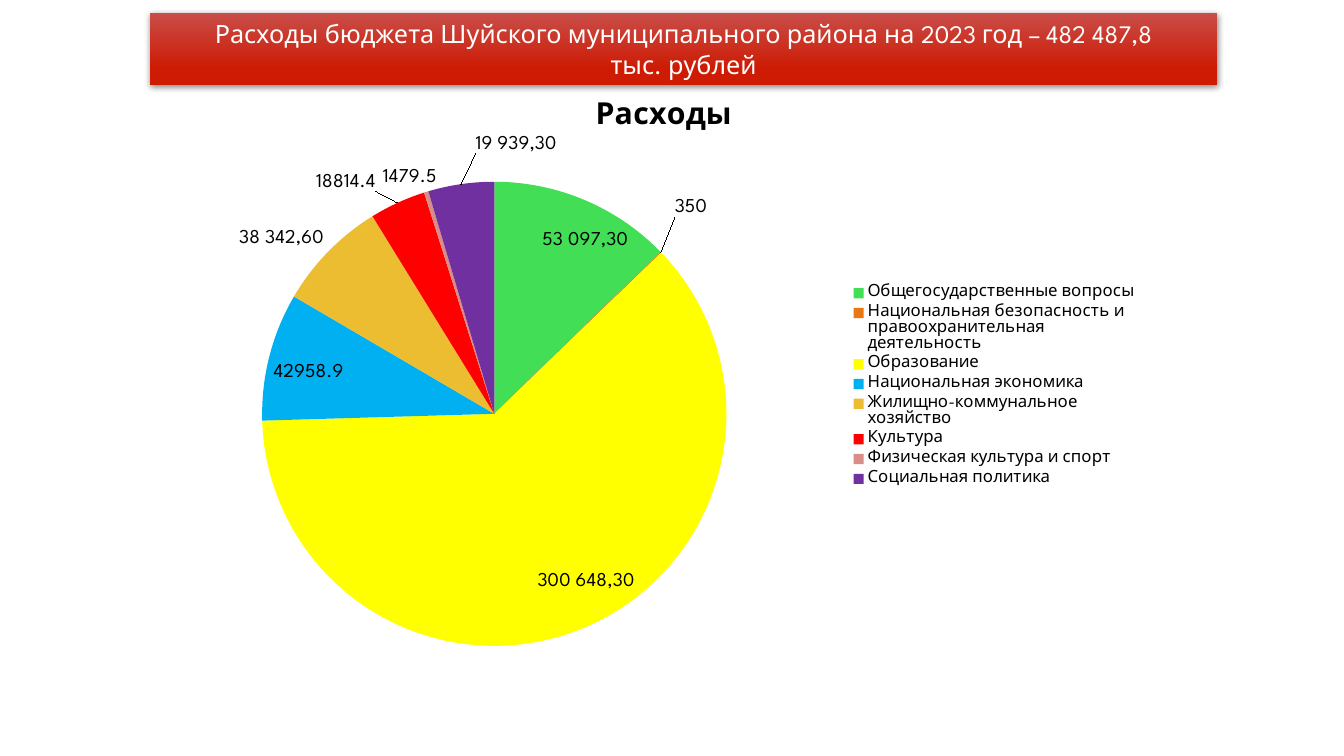
from lxml import etree
from pptx import Presentation
from pptx.chart.data import CategoryChartData
from pptx.dml.color import RGBColor
from pptx.enum.chart import XL_CHART_TYPE, XL_LABEL_POSITION, XL_LEGEND_POSITION
from pptx.enum.text import MSO_ANCHOR, PP_ALIGN
from pptx.oxml import parse_xml
from pptx.oxml.ns import nsdecls, qn
from pptx.util import Inches, Pt

PIE = XL_CHART_TYPE.PIE
BEST = XL_LABEL_POSITION.BEST_FIT
RIGHT = XL_LEGEND_POSITION.RIGHT
CENTER = PP_ALIGN.CENTER
MIDDLE = MSO_ANCHOR.MIDDLE

WHITE = RGBColor(0xFF, 0xFF, 0xFF)
BLACK = RGBColor(0x00, 0x00, 0x00)
ROSE = RGBColor(0xC9, 0x4D, 0x48)
BRICK = RGBColor(0xCD, 0x1B, 0x04)
GREEN = RGBColor(0x42, 0xDE, 0x55)
ORANGE = RGBColor(0xEB, 0x77, 0x12)
YELLOW = RGBColor(0xFF, 0xFF, 0x00)
BLUE = RGBColor(0x00, 0xB0, 0xF0)
GOLD = RGBColor(0xEC, 0xBD, 0x31)
RED = RGBColor(0xFF, 0x00, 0x00)
PINK = RGBColor(0xD9, 0x8C, 0x88)
PURPLE = RGBColor(0x70, 0x30, 0xA0)

HEAD = [
    "Расходы бюджета Шуйского муниципального района на 2023 год – 482 487,8",
    "тыс. рублей",
]
COSTS = [
    ("Общегосударственные вопросы", 61281.2, GREEN, "53 097,30", None),
    ("Национальная безопасность и правоохранительная деятельность",
     350, ORANGE, None, {"x": 0.01, "y": -0.05}),
    ("Образование", 297971.7, YELLOW, "300 648,30", None),
    ("Национальная экономика", 42958.9, BLUE, None, None),
    ("Жилищно-коммунальное хозяйство", 37523.9, GOLD, "38 342,60", None),
    ("Культура", 18814.4, RED, None, {"x": -0.02, "y": -0.01}),
    ("Физическая культура и спорт", 1479.5, PINK, None, None),
    ("Социальная политика", 22108.2, PURPLE, "19 939,30", {"x": 0.1, "y": -0.04}),
]
PLOT = {"layoutTarget": "inner", "xMode": "edge", "yMode": "edge",
        "x": 0.05, "y": 0.17, "w": 0.55, "h": 0.75}


class Deck:
    face = "League Spartan"

    def __init__(self):
        self.prs = Presentation()
        self.prs.slide_width = Inches(13.33)
        self.prs.slide_height = Inches(7.5)
        self.slide = self.prs.slides.add_slide(self.prs.slide_layouts[5])

    def style(self, font, size, color, bold=False):
        font.name = self.face
        font.size = Pt(size)
        font.color.rgb = color
        font.bold = bold

    def layout(self, items):
        node = parse_xml(f"<c:layout {nsdecls('c')}/>")
        manual = etree.SubElement(node, qn("c:manualLayout"))
        for name, val in items.items():
            etree.SubElement(manual, qn("c:" + name)).set("val", str(val))
        return node

    def title(self, lines, left, top, width, height):
        box = self.slide.shapes.title
        box.left, box.top = Inches(left), Inches(top)
        box.width, box.height = Inches(width), Inches(height)
        box.fill.gradient()
        box.fill.gradient_angle = 270
        for stop, color, place in zip(box.fill.gradient_stops, (ROSE, BRICK), (0, 0.78)):
            stop.color.rgb = color
            stop.position = place
        box.shadow.inherit = False
        box._element.spPr.find(qn("a:effectLst")).append(parse_xml(
            f'<a:outerShdw {nsdecls("a")} blurRad="{Pt(4.5)}" dist="{Pt(1.5)}" '
            'dir="5400000" rotWithShape="0"><a:srgbClr val="000000">'
            '<a:alpha val="48000"/></a:srgbClr></a:outerShdw>'))
        frame = box.text_frame
        frame.text = "\n".join(lines)
        frame.word_wrap = True
        frame.vertical_anchor = MIDDLE
        for para in frame.paragraphs:
            para.alignment = CENTER
            for run in para.runs:
                self.style(run.font, 18, WHITE)

    def label(self, point, text, shift):
        tag = point.data_label
        tag.position = BEST
        if text:
            tag.text_frame.text = text
            self.style(tag.text_frame.paragraphs[0].runs[0].font, 14, BLACK)
        else:
            self.style(tag.font, 14, BLACK)
        if shift:
            node = tag._get_or_add_dLbl()
            node.insert(1, self.layout(shift))

    def pie(self, name, rows, left, top, width, height):
        data = CategoryChartData()
        data.categories = [row[0] for row in rows]
        data.add_series(name, [row[1] for row in rows])
        chart = self.slide.shapes.add_chart(
            PIE, Inches(left), Inches(top), Inches(width), Inches(height), data).chart
        self.style(chart.font, 18, BLACK)
        chart.has_title = True
        frame = chart.chart_title.text_frame
        frame.text = name
        self.style(frame.paragraphs[0].runs[0].font, 21.6, BLACK, True)
        chart.has_legend = True
        chart.legend.position = RIGHT
        chart.legend.include_in_layout = False
        self.style(chart.legend.font, 12, BLACK)
        area = chart._chartSpace.chart.plotArea
        for old in area.findall(qn("c:layout")):
            area.remove(old)
        area.insert(0, self.layout(PLOT))
        plot = chart.plots[0]
        plot.vary_by_categories = True
        series = plot.series[0]
        tags = series.data_labels
        tags.show_value = True
        tags.position = BEST
        self.style(tags.font, 14, BLACK)
        for index, (_, _, color, text, shift) in enumerate(rows):
            point = series.points[index]
            point.format.fill.solid()
            point.format.fill.fore_color.rgb = color
            if text or shift:
                self.label(point, text, shift)


def main():
    deck = Deck()
    deck.title(HEAD, 1.49, 0.13, 10.58, 0.71)
    deck.pie("Расходы", COSTS, 1.78, 0.76, 9.61, 6.14)
    deck.prs.save("out.pptx")


if __name__ == "__main__":
    main()
